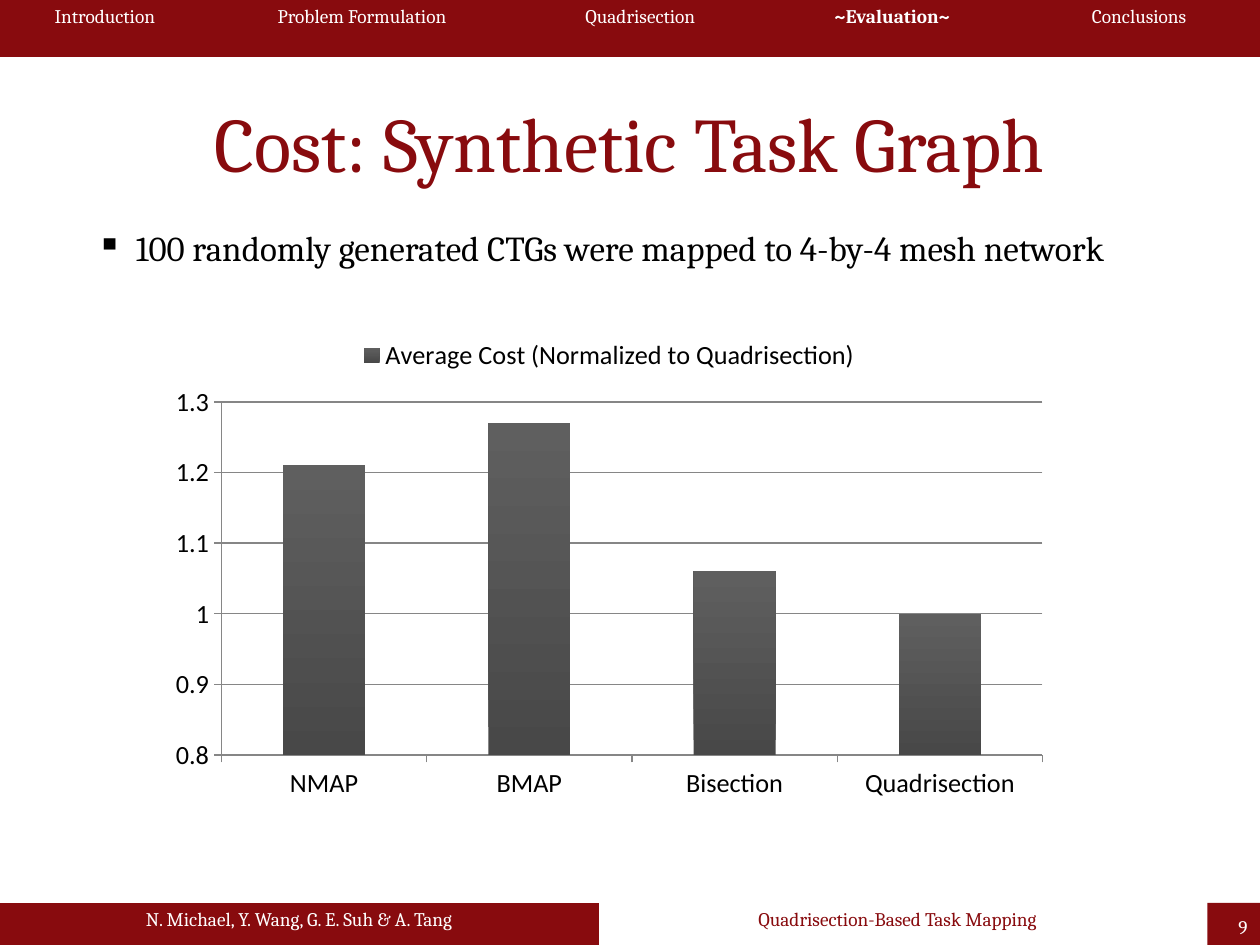
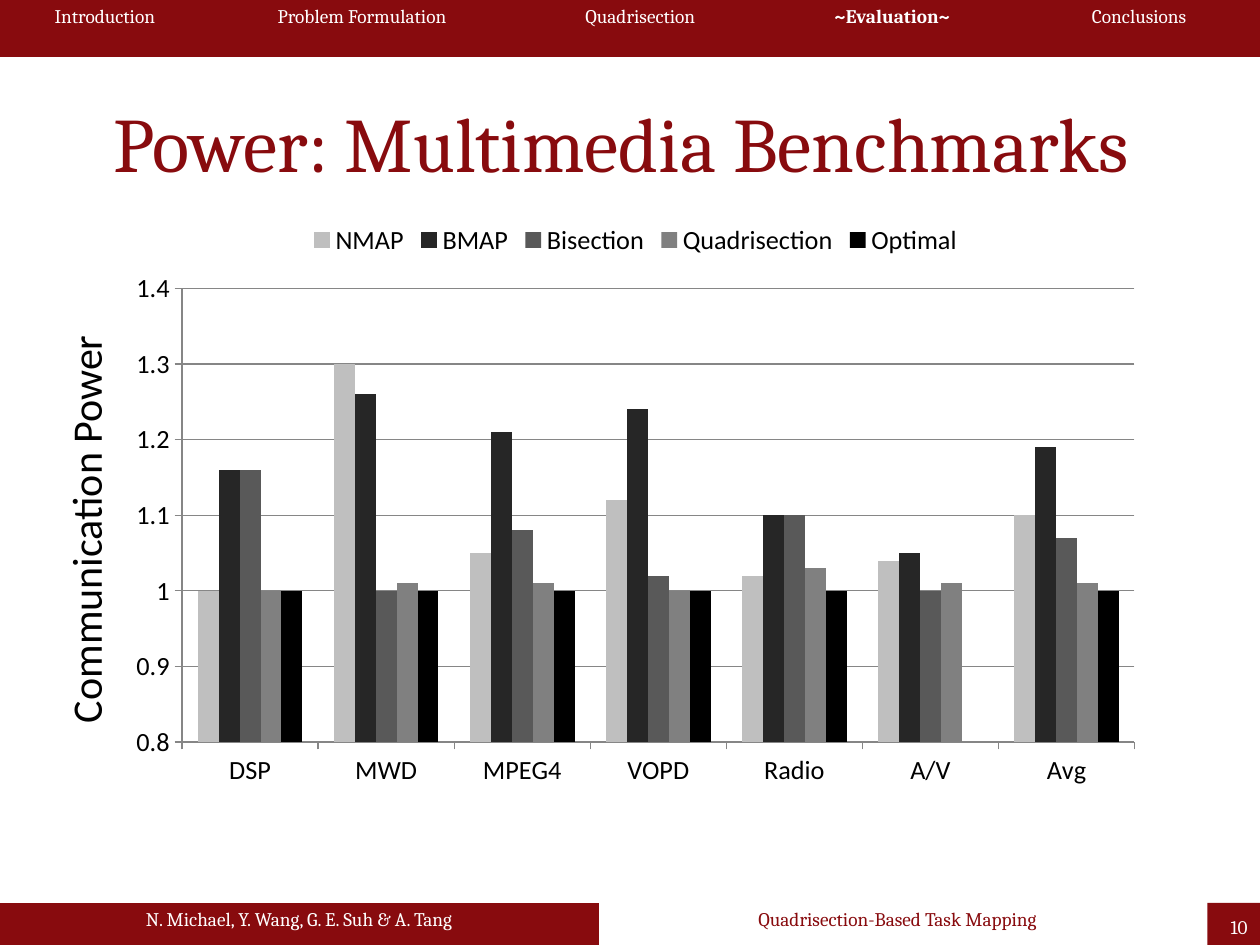
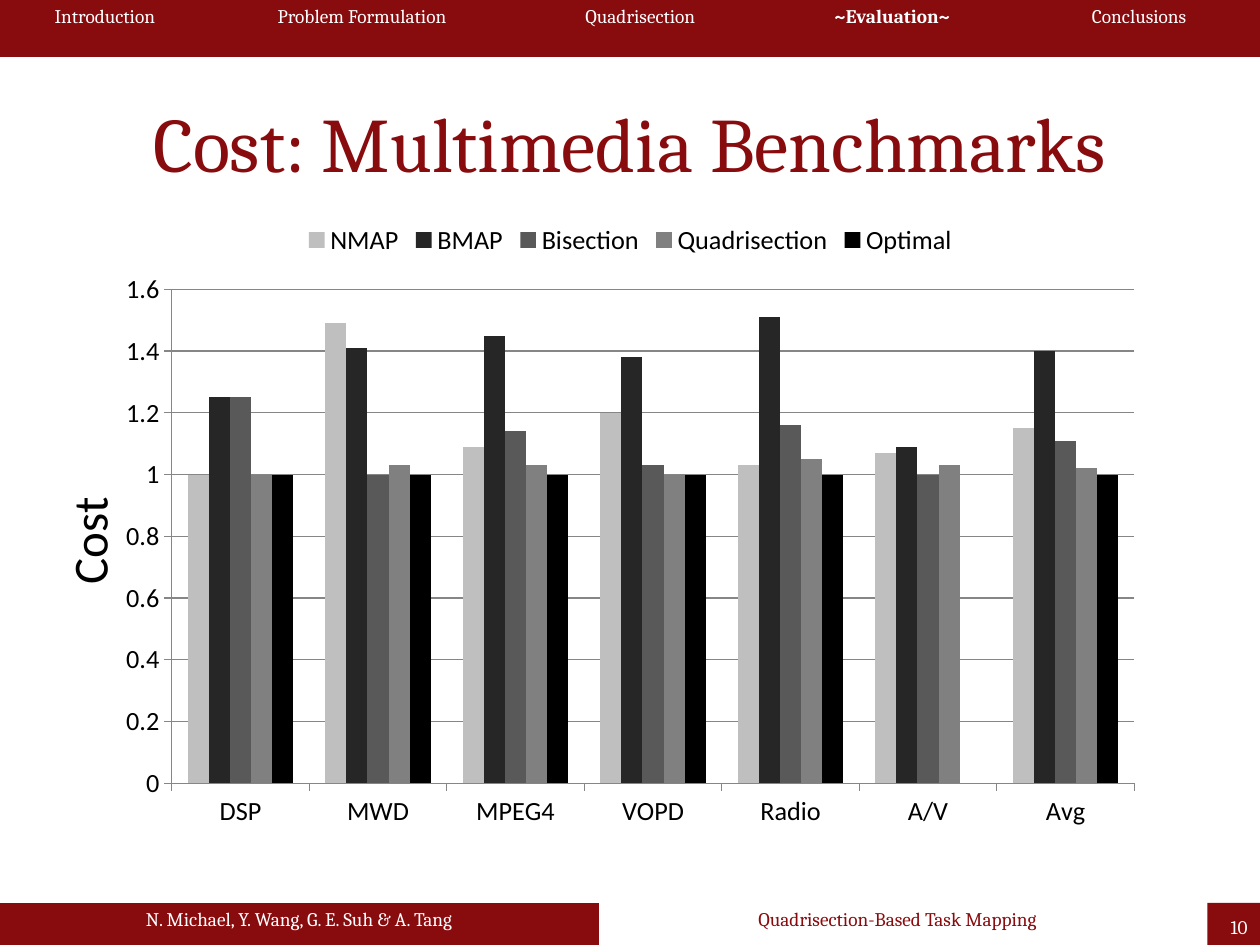
from typing import NamedTuple

from lxml.etree import SubElement
from pptx import Presentation
from pptx.chart.data import CategoryChartData
from pptx.dml.color import RGBColor
from pptx.enum.chart import XL_CHART_TYPE, XL_LEGEND_POSITION, XL_TICK_MARK
from pptx.enum.shapes import MSO_SHAPE
from pptx.enum.text import MSO_ANCHOR, PP_ALIGN
from pptx.oxml.ns import qn
from pptx.util import Cm, Pt

COLORS = {
    "crimson": "880B0E",
    "white": "FFFFFF",
    "black": "000000",
    "grid": "868686",
    "bar_top": "5F5F5F",
    "bar_bottom": "484848",
}
METHOD_COLORS = {
    "NMAP": "BFBFBF",
    "BMAP": "262626",
    "Bisection": "595959",
    "Quadrisection": "808080",
    "Optimal": "000000",
}
HEADING_FONT = "Cambria"
CHART_FONT = "Calibri"
NO_GRID_STYLE = "{2D5ABB26-0587-4C30-8999-92F81FD0307C}"

SECTIONS = ["Introduction", "Problem Formulation", "Quadrisection", "~Evaluation~", "Conclusions"]
SECTION_WIDTHS = [4.23, 6.14, 5.08, 5.08, 4.87]
CURRENT_SECTION = "~Evaluation~"
AUTHORS = "N. Michael, Y. Wang, G. E. Suh & A. Tang"
TALK = "Quadrisection-Based Task Mapping"
BENCHMARKS = ["DSP", "MWD", "MPEG4", "VOPD", "Radio", "A/V", "Avg"]
OPTIMAL = [1, 1, 1, 1, 1, None, 1]


class Box(NamedTuple):
    """A rectangle in centimetres."""

    left: float
    top: float
    width: float
    height: float

    def lengths(self):
        """Return the four measures as lengths."""
        return [Cm(value) for value in self]


HEADER_BOX = Box(0, 0, 25.4, 1.15)
TITLE_BOX = Box(1.27, 1.27, 22.86, 3.18)
FOOTER_BOX = Box(0, 18.2, 25.4, 0.97)


def color(name):
    """Look up a named colour."""
    return RGBColor.from_string(COLORS[name])


def add_run(paragraph, text, size, color_name, font=HEADING_FONT, bold=False):
    """Append one formatted run."""
    run = paragraph.add_run()
    run.text = text
    run.font.size = Pt(size)
    run.font.name = font
    run.font.bold = bold
    run.font.color.rgb = color(color_name)


def add_text(slide, box, text, size, color_name, font=HEADING_FONT, wrap=True):
    """Add a text box with one paragraph and return the shape."""
    shape = slide.shapes.add_textbox(*box.lengths())
    shape.text_frame.word_wrap = wrap
    add_run(shape.text_frame.paragraphs[0], text, size, color_name, font)
    return shape


def add_band(slide, box, widths):
    """Add a one-row table without grid and return its cells."""
    table = slide.shapes.add_table(1, len(widths), *box.lengths()).table
    table.first_row = table.horz_banding = False
    table._tbl.tblPr.find(qn("a:tableStyleId")).text = NO_GRID_STYLE
    for column, width in zip(table.columns, widths):
        column.width = Cm(width)
    return list(table.rows[0].cells)


def fill_cell(cell, text, text_color, fill_color=None, bold=False):
    """Write centred text in a band cell and colour its background."""
    if fill_color:
        cell.fill.solid()
        cell.fill.fore_color.rgb = color(fill_color)
    else:
        cell.fill.background()
    paragraph = cell.text_frame.paragraphs[0]
    paragraph.alignment = PP_ALIGN.CENTER
    add_run(paragraph, text, 11, text_color, bold=bold)


def add_header(slide, box):
    """Draw the section navigation."""
    for cell, section in zip(add_band(slide, box, SECTION_WIDTHS), SECTIONS):
        fill_cell(cell, section, "white", "crimson", section == CURRENT_SECTION)


def add_title(slide, box, text):
    """Draw the centred slide title."""
    frame = add_text(slide, box, text, 44, "crimson").text_frame
    frame.vertical_anchor = MSO_ANCHOR.MIDDLE
    frame.paragraphs[0].alignment = PP_ALIGN.CENTER


def add_footer(slide, box, number):
    """Draw the authors, the talk name and the page number."""
    number_width = 1.06
    half = 0.475 * box.width
    band = box._replace(width=2 * half)
    authors, talk = add_band(slide, band, [half, half])
    fill_cell(authors, AUTHORS, "white", "crimson")
    fill_cell(talk, TALK, "crimson")

    corner = box._replace(left=box.left + box.width - number_width, width=number_width)
    shape = slide.shapes.add_shape(MSO_SHAPE.RECTANGLE, *corner.lengths())
    shape.shadow.inherit = False
    shape.fill.solid()
    shape.fill.fore_color.rgb = color("crimson")
    shape.line.fill.background()
    frame = shape.text_frame
    frame.word_wrap = False
    frame.vertical_anchor = MSO_ANCHOR.MIDDLE
    paragraph = frame.paragraphs[0]
    paragraph.alignment = PP_ALIGN.RIGHT
    add_run(paragraph, number, 11, "white")


def add_bullet(slide, box, text):
    """Draw a paragraph with a square bullet and a hanging indent."""
    paragraph = add_text(slide, box, text, 20, "black").text_frame.paragraphs[0]
    properties = paragraph._p.get_or_add_pPr()
    properties.set("marL", str(Cm(0.79)))
    properties.set("indent", str(-Cm(0.79)))
    SubElement(properties, qn("a:buChar"), char="▪")


def add_axis_title(slide, box, text, size):
    """Draw a text that reads upwards."""
    add_text(slide, box, text, size, "black", CHART_FONT, wrap=False).rotation = 270


def add_column_chart(slide, box, categories, series, scale, stacked=False):
    """Draw a column chart with its legend on top and return the plot."""
    data = CategoryChartData()
    data.categories = categories
    for name, values in series.items():
        data.add_series(name, values)
    kind = XL_CHART_TYPE.COLUMN_STACKED if stacked else XL_CHART_TYPE.COLUMN_CLUSTERED
    chart = slide.shapes.add_chart(kind, *box.lengths(), data).chart
    chart.font.size = Pt(15)
    chart.font.name = CHART_FONT
    chart.font.color.rgb = color("black")
    chart.has_title = False
    chart.has_legend = True
    chart.legend.position = XL_LEGEND_POSITION.TOP
    chart.legend.include_in_layout = False

    value_axis = chart.value_axis
    value_axis.minimum_scale, value_axis.maximum_scale, value_axis.major_unit = scale
    value_axis.has_major_gridlines = True
    for axis in (chart.category_axis, value_axis):
        axis.major_tick_mark = XL_TICK_MARK.OUTSIDE
    for line in (chart.category_axis.format.line, value_axis.format.line,
                 value_axis.major_gridlines.format.line):
        line.color.rgb = color("grid")
        line.width = Pt(0.75)

    plot = chart.plots[0]
    plot.vary_by_categories = False
    plot.gap_width = 150
    plot.overlap = 100 if stacked else 0
    return plot


def add_frame(presentation, title, number):
    """Add a slide with header, title and footer."""
    slide = presentation.slides.add_slide(presentation.slide_layouts[6])
    add_title(slide, TITLE_BOX, title)
    add_footer(slide, FOOTER_BOX, number)
    add_header(slide, HEADER_BOX)
    return slide


def add_synthetic_slide(presentation):
    """Build the slide on randomly generated task graphs."""
    slide = add_frame(presentation, "Cost: Synthetic Task Graph", "9")
    add_bullet(slide, Box(1.7, 4.45, 21.2, 2.82),
               "100 randomly generated CTGs were mapped to 4-by-4 mesh network")
    plot = add_column_chart(
        slide, Box(3.18, 6.56, 18.2, 9.74),
        ["NMAP", "BMAP", "Bisection", "Quadrisection"],
        {"Average Cost (Normalized to Quadrisection)": [1.21, 1.27, 1.06, 1]},
        (0.8, 1.3, 0.1), stacked=True)
    fill = plot.series[0].format.fill
    fill.gradient()
    fill.gradient_angle = 90
    for stop, name in zip(fill.gradient_stops, ("bar_bottom", "bar_top")):
        stop.color.rgb = color(name)


def add_benchmark_slide(presentation, title, chart_box, rows, scale, axis_box, axis_title, size):
    """Build a slide that compares the mapping methods by benchmark."""
    slide = add_frame(presentation, title, "10")
    series = dict(zip(METHOD_COLORS, rows + [OPTIMAL]))
    plot = add_column_chart(slide, chart_box, BENCHMARKS, series, scale)
    for method in plot.series:
        method.format.fill.solid()
        method.format.fill.fore_color.rgb = RGBColor.from_string(METHOD_COLORS[method.name])
    add_axis_title(slide, axis_box, axis_title, size)


def main():
    """Build and save the presentation."""
    presentation = Presentation()
    presentation.slide_width = Cm(25.4)
    presentation.slide_height = Cm(19.05)
    add_synthetic_slide(presentation)
    add_benchmark_slide(
        presentation, "Power: Multimedia Benchmarks ", Box(2.33, 4.23, 20.96, 11.85),
        [
            [1, 1.3, 1.05, 1.12, 1.02, 1.04, 1.1],
            [1.16, 1.26, 1.21, 1.24, 1.1, 1.05, 1.19],
            [1.16, 1, 1.08, 1.02, 1.1, 1, 1.07],
            [1, 1.01, 1.01, 1, 1.03, 1.01, 1.01],
        ],
        (0.8, 1.4, 0.1), Box(-2.51, 9.96, 8.46, 1.27), "Communication Power", 24)
    add_benchmark_slide(
        presentation, "Cost: Multimedia Benchmarks", Box(2.12, 4.23, 21.17, 12.7),
        [
            [1, 1.49, 1.09, 1.2, 1.03, 1.07, 1.15],
            [1.25, 1.41, 1.45, 1.38, 1.51, 1.09, 1.4],
            [1.25, 1, 1.14, 1.03, 1.16, 1, 1.11],
            [1, 1.03, 1.03, 1, 1.05, 1.03, 1.02],
        ],
        (0, 1.6, 0.2), Box(0.64, 10.16, 2.29, 1.45), "Cost", 28)
    presentation.save("out.pptx")


if __name__ == "__main__":
    main()
